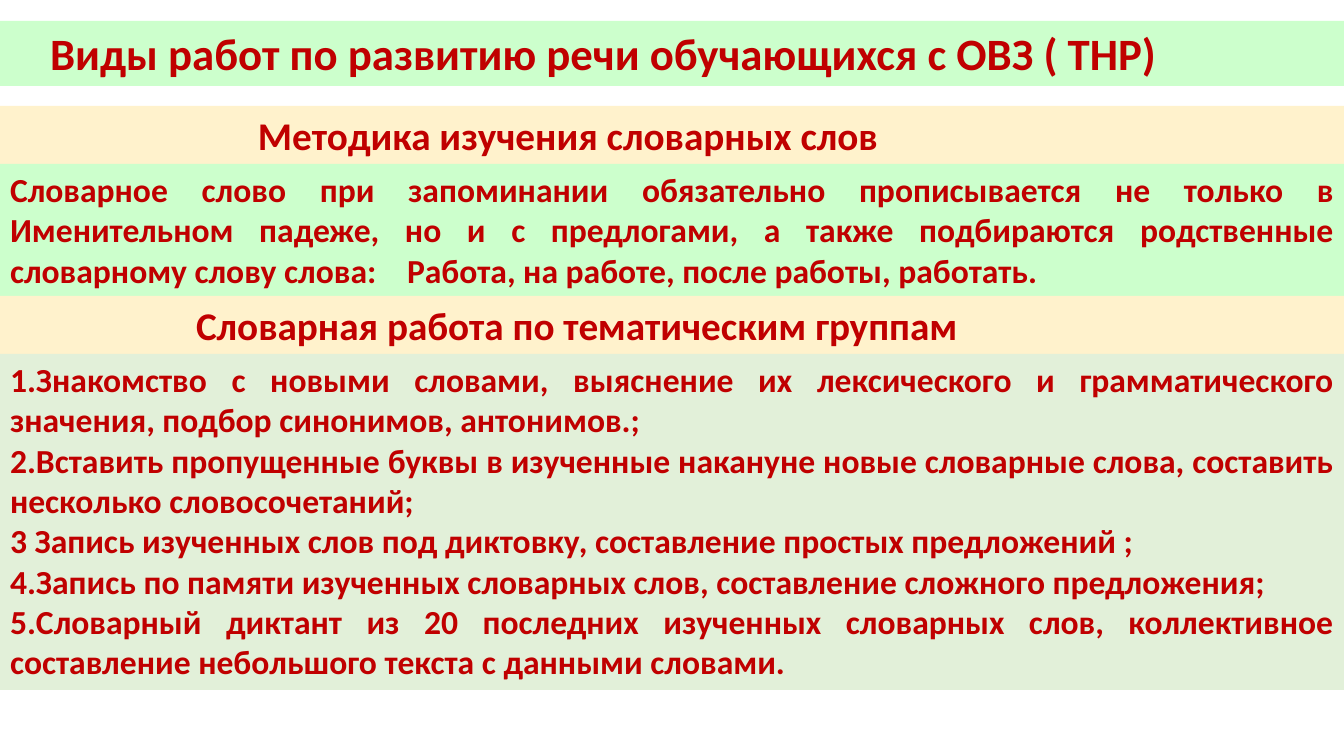
from lxml import etree
from pptx import Presentation
from pptx import util as u
from pptx.dml.color import RGBColor
from pptx.enum import text
from pptx.oxml.ns import qn

RED = RGBColor(0xC0, 0x00, 0x00)
MINT = RGBColor(0xCC, 0xFF, 0xCC)
CREAM = RGBColor(0xFF, 0xF2, 0xCC)
SAGE = RGBColor(0xE2, 0xF0, 0xD9)

WIDTH, HEIGHT = 1344, 756

METHOD = [
    "Словарное слово при запоминании обязательно прописывается не только в "
    "Именительном падеже, но и с предлогами, а также подбираются родственные "
    "словарному слову слова:\tРабота, на работе, после работы, работать.",
]
TASKS = [
    "1.Знакомство с новыми словами, выяснение их лексического и "
    "грамматического значения, подбор синонимов, антонимов.;",
    "2.Вставить пропущенные буквы в изученные накануне новые словарные слова, "
    "составить несколько словосочетаний;",
    "3 Запись изученных слов под диктовку, составление простых предложений ;",
    "4.Запись по памяти изученных словарных слов, составление сложного предложения;",
    "5.Словарный диктант из 20 последних изученных словарных слов, "
    "коллективное составление небольшого текста с данными словами.",
]


def px(n):
    return u.Emu(round(n * 914400 / 100.8))


class Deck:
    font = "Calibri"
    color = RED

    def __init__(self):
        self.prs = Presentation()
        self.prs.slide_width, self.prs.slide_height = px(WIDTH), px(HEIGHT)
        self.s = self.prs.slides.add_slide(self.prs.slide_layouts[6])

    def band(self, top, height, fill, lines, size, left=10, align=None):
        sp = self.s.shapes.add_textbox(0, px(top), px(WIDTH), px(height))
        sp.fill.solid()
        sp.fill.fore_color.rgb = fill
        tf = sp.text_frame
        tf.word_wrap = True
        tf.auto_size = text.MSO_AUTO_SIZE.SHAPE_TO_FIT_TEXT
        tf.margin_left = px(left)
        tf.text = "\n".join(lines)
        for p in tf.paragraphs:
            p.alignment = align
            p.font.name = self.font
            p.font.size = u.Pt(size)
            p.font.bold = True
            p.font.color.rgb = self.color
        return tf

    def heading(self, top, height, fill, line, left, size=28):
        self.band(top, height, fill, [line], size, left)

    def body(self, top, height, fill, lines):
        return self.band(top, height, fill, lines, 24, align=text.PP_ALIGN.JUSTIFY)

    def tab_stop(self, p, pos):
        pPr = p.font._element.getparent()
        tabs = etree.Element(qn("a:tabLst"))
        etree.SubElement(tabs, qn("a:tab"), pos=str(px(pos)), algn="l")
        pPr.insert(0, tabs)


def main():
    deck = Deck()
    deck.heading(21, 65, MINT, "Виды работ по развитию речи обучающихся с ОВЗ ( ТНР)", 50, 32)
    deck.heading(106, 58, CREAM, "Методика изучения словарных слов", 258)
    method = deck.body(164, 132, MINT, METHOD)
    deck.tab_stop(method.paragraphs[0], 397)
    deck.heading(296, 58, CREAM, "Словарная работа по тематическим группам", 196)
    deck.body(354, 336, SAGE, TASKS)
    deck.prs.save("out.pptx")


if __name__ == "__main__":
    main()
